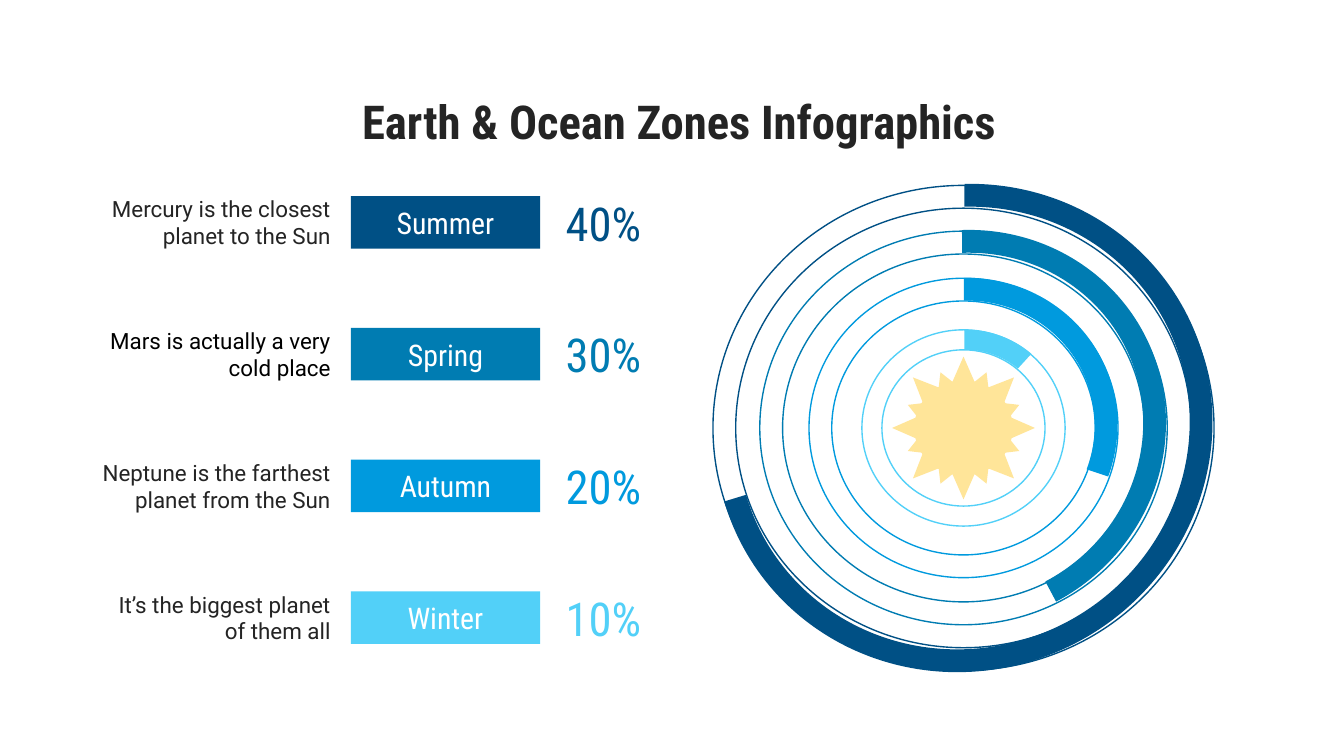
"""Build the season infographic slide with its ring diagram and sun."""
from math import cos, radians, sin

from pptx import Presentation
from pptx.dml.color import RGBColor
from pptx.enum.shapes import MSO_SHAPE
from pptx.enum.text import MSO_ANCHOR, PP_ALIGN
from pptx.util import Cm, Pt


def paint(form, fill=None, line=None):
    form.shadow.inherit = False
    if fill:
        form.fill.solid()
        form.fill.fore_color.rgb = RGBColor.from_string(fill)
    else:
        form.fill.background()
    if line:
        form.line.color.rgb = RGBColor.from_string(line)
        form.line.width = Pt(0.75)
    else:
        form.line.fill.background()


def write(form, text, size=12, font="Roboto", color="242424", bold=False,
          align=PP_ALIGN.CENTER, anchor=MSO_ANCHOR.MIDDLE):
    frame = form.text_frame
    frame.word_wrap = True
    frame.vertical_anchor = anchor
    frame.margin_left = frame.margin_right = Cm(0.25)
    frame.margin_top = frame.margin_bottom = Cm(0.25)
    para = frame.paragraphs[0]
    para.alignment = align
    run = para.add_run()
    run.text = text
    run.font.size = Pt(size)
    run.font.name = font
    run.font.bold = bold
    run.font.color.rgb = RGBColor.from_string(color)


deck = Presentation()
deck.slide_width, deck.slide_height = Cm(25.4), Cm(14.29)
slide = deck.slides.add_slide(deck.slide_layouts[5])
shapes = slide.shapes
narrow = "Roboto Condensed"

title = shapes.title
title.left, title.top, title.width, title.height = Cm(1.5), Cm(1.5), Cm(22.66), Cm(1.6)
write(title, "Earth & Ocean Zones Infographics", size=25, font=narrow, bold=True,
      anchor=MSO_ANCHOR.TOP)

mid_x, mid_y = 18.21, 8.09
rings = [
    ("005085", 9.47, 9.17, 0.047, 63.5, 48.347, 199.957),
    ("007CB2", 7.70, 7.44, 0.058, 65.1, 109.892, 201.316),
    ("009ADE", 5.84, 5.66, 0.076, 70.4, 139.127, 204.149),
    ("52D0F8", 3.84, 3.71, 0.102, 75.6, 181.891, 207.006),
]
dial = shapes.add_group_shape().shapes
for color, wide, high, thick, *_ in rings:
    ring = dial.add_shape(MSO_SHAPE.DONUT, Cm(mid_x - wide / 2), Cm(mid_y - high / 2),
                          Cm(wide), Cm(high))
    ring.adjustments[0] = thick
    paint(ring, line=color)
for color, high, wide, thick, turn, start, end in rings:
    arc = dial.add_shape(MSO_SHAPE.BLOCK_ARC, Cm(mid_x - wide / 2), Cm(mid_y - high / 2),
                         Cm(wide), Cm(high))
    for i, value in enumerate((start, end, thick)):
        arc.adjustments[i] = value
    arc.rotation = turn
    arc._element.spPr.get_or_add_xfrm().set("flipH", "1")
    paint(arc, fill=color)

rows = [
    ("Summer", "40%", "Mercury is the closest planet to the Sun", "242424"),
    ("Spring", "30%", "Mars is actually a very cold place", "000000"),
    ("Autumn", "20%", "Neptune is the farthest planet from the Sun", "242424"),
    ("Winter", "10%", "It’s the biggest planet of them all", "242424"),
]
for i, (name, share, note, ink) in enumerate(rows):
    color = rings[i][0]
    top, high = Cm(3.71 + 2.49 * i), Cm(0.99)
    label = shapes.add_shape(MSO_SHAPE.ROUNDED_RECTANGLE, Cm(6.63), top, Cm(3.58), high)
    label.adjustments[0] = 0
    paint(label, fill=color)
    write(label, name, size=16, font=narrow, color="FFFFFF")
    write(shapes.add_textbox(Cm(1.5), top, Cm(5), high), note, color=ink,
          align=PP_ALIGN.RIGHT)
    write(shapes.add_textbox(Cm(10.44), top, Cm(2.26), high), share, size=25,
          font=narrow, color=color, align=PP_ALIGN.LEFT)

sun = shapes.add_group_shape().shapes
gold = "FFE599"
base = 0.87
for i in range(16):
    tip, half = (1.14, 0.15) if i % 2 else (1.35, 0.21)
    angle = radians(22.5 * i)
    points = [(Cm(mid_x + out * cos(angle) - side * sin(angle)),
               Cm(mid_y + out * sin(angle) + side * cos(angle)))
              for out, side in ((tip, 0), (base, half), (base, -half))]
    path = sun.build_freeform(*points[0])
    path.add_line_segments(points[1:])
    paint(path.convert_to_shape(), fill=gold)
disc = sun.add_shape(MSO_SHAPE.OVAL, Cm(mid_x - 0.93), Cm(mid_y - 0.9), Cm(1.86), Cm(1.8))
paint(disc, fill=gold)

deck.save("out.pptx")
